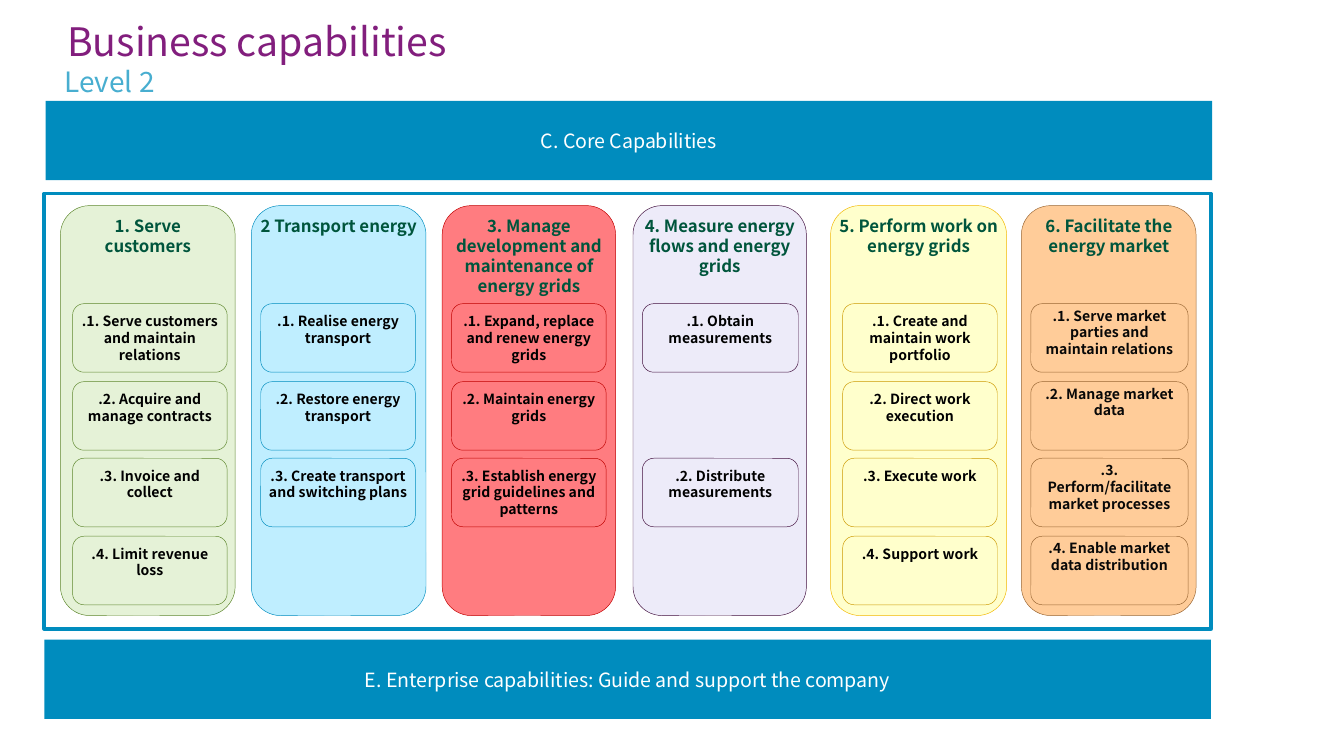
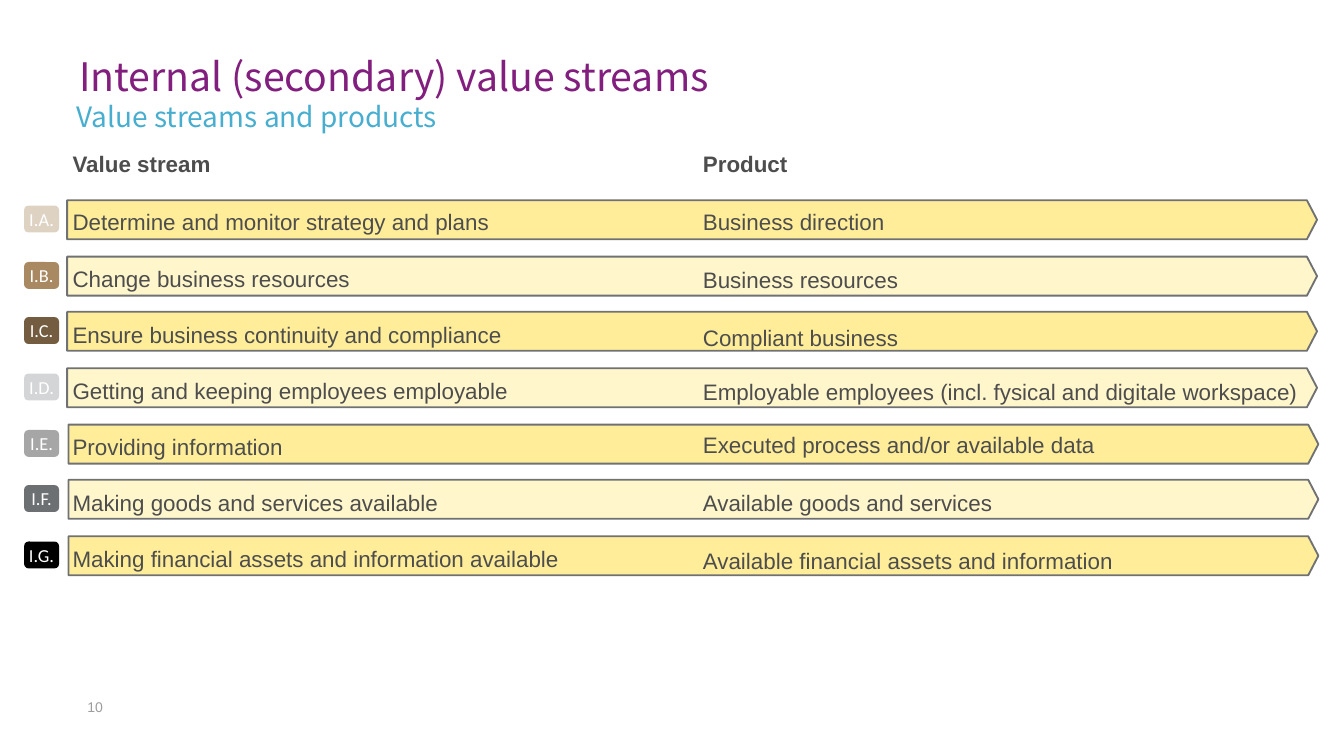
from dataclasses import dataclass
from itertools import cycle

from pptx import Presentation
from pptx import util as u
from pptx.dml.color import RGBColor
from pptx.enum import shapes, text

SCALE = 9144


@dataclass(frozen=True)
class Theme:
    """Colours, fonts and type sizes shared by the slides."""
    sans: str = "Noto Sans CJK TC"
    body: str = "Arial"
    badge: str = "Calibri"
    purple: str = "821E7D"
    sky: str = "48AED0"
    blue: str = "008CBE"
    green: str = "00553C"
    white: str = "FFFFFF"
    black: str = "000000"
    soft_black: str = "080808"
    ink: str = "4D4D4D"
    outline: str = "707173"
    muted: str = "9E9C9E"
    stripes: tuple = ("FFED99", "FFF6CC")
    title_size: float = 21
    subtitle_size: float = 15
    band_size: float = 10.5
    stream_size: float = 12
    badge_size: float = 9.8
    heading_size: float = 9
    small_size: float = 7.5


THEME = Theme()


@dataclass(frozen=True)
class Capability:
    """One capability card and the grid row it sits in."""
    row: int
    label: str
    side: int = 0


@dataclass(frozen=True)
class Domain:
    """One column of the core capabilities."""
    left: int
    width: int
    heading: tuple
    fill: str
    line: str
    indent: int
    card_width: int
    capabilities: tuple
    card_line: str = ""
    card_top: int = 4
    card_ink: str = THEME.black
    card_filled: bool = True
    wrap: bool = True


DOMAINS = (
    Domain(12, 130, ("1. Serve", "customers"), "E5F2D7", "5E872D", 9, 115, (
        Capability(0, ".1. Serve customers and maintain relations"),
        Capability(1, ".2. Acquire and manage contracts", 7),
        Capability(2, ".3. Invoice and collect", 7),
        Capability(3, ".4. Limit revenue loss", 7))),
    Domain(154, 130, ("2 Transport energy",), "BFEEFF", "008CBE", 7, 115, (
        Capability(0, ".1. Realise energy transport"),
        Capability(1, ".2. Restore energy transport"),
        Capability(2, ".3. Create transport and switching plans"))),
    Domain(296, 129, ("3. Manage development and maintenance of energy grids",),
           "FF7C80", "C00000", 7, 115, (
        Capability(0, ".1. Expand, replace and renew energy grids"),
        Capability(1, ".2. Maintain energy grids"),
        Capability(2, ".3. Establish energy grid guidelines and patterns"))),
    Domain(438, 129, ("4. Measure energy flows and energy grids",),
           "EDEBF9", "410F3E", 7, 116, (
        Capability(0, ".1. Obtain measurements"),
        Capability(2, ".2. Distribute measurements"))),
    Domain(585, 131, ("5. Perform work on", "energy grids"),
           "FFFFCC", "F2B800", 9, 115, (
        Capability(0, ".1. Create and maintain work portfolio", 3),
        Capability(1, ".2. Direct work execution", 7),
        Capability(2, ".3. Execute work", 7),
        Capability(3, ".4. Support work", 7)), card_line="CC9900", wrap=False),
    Domain(727, 130, ("6. Facilitate the energy market",),
           "FFCC99", "996633", 7, 117, (
        Capability(0, ".1. Serve market parties and maintain relations", 7),
        Capability(1, ".2. Manage market data", 7),
        Capability(2, ".3. Perform/facilitate market processes", 7),
        Capability(3, ".4. Enable market data distribution", 7)),
        card_top=0, card_ink=THEME.soft_black, card_filled=False),
)

STREAMS = (
    ("I.A.", "DED2C3", "Determine and monitor strategy and plans",
     "Business direction"),
    ("I.B.", "A98962", "Change business resources", "Business resources"),
    ("I.C.", "735C3F", "Ensure business continuity and compliance",
     "Compliant business"),
    ("I.D.", "D4D5D6", "Getting and keeping employees employable",
     "Employable employees (incl. fysical and digitale workspace)"),
    ("I.E.", "A6A6A6", "Providing information",
     "Executed process and/or available data"),
    ("I.F.", "6D7073", "Making goods and services available",
     "Available goods and services"),
    ("I.G.", "000000", "Making financial assets and information available",
     "Available financial assets and information"),
)


def px(*lengths):
    """Turn px lengths into EMU."""
    return [u.Emu(length * SCALE) for length in lengths]


def rgb(colour):
    """Turn a hex colour into an RGBColor."""
    return RGBColor.from_string(colour)


def write(shape, *lines, size, colour, font=THEME.sans, bold=False, align="LEFT",
          anchor="TOP", inset=(0, 0, 0, 0), wrap=True, spacing=None,
          before=0, after=(0,), bold_first=False):
    """Write one paragraph per line into a shape."""
    frame = shape.text_frame
    frame.word_wrap = wrap
    frame.auto_size = text.MSO_AUTO_SIZE.NONE
    frame.vertical_anchor = text.MSO_ANCHOR[anchor]
    (frame.margin_left, frame.margin_top,
     frame.margin_right, frame.margin_bottom) = px(*inset)
    for index, (line, gap) in enumerate(zip(lines, cycle(after))):
        paragraph = frame.paragraphs[0] if index == 0 else frame.add_paragraph()
        paragraph.alignment = text.PP_ALIGN[align]
        paragraph.line_spacing = spacing
        paragraph.space_before = u.Pt(before if index else 0)
        paragraph.space_after = u.Pt(gap)
        run = paragraph.add_run()
        run.text = line
        run.font.name = font
        run.font.size = u.Pt(size)
        run.font.bold = bold or (bold_first and index == 0)
        run.font.color.rgb = rgb(colour)


def add_text(slide, box, *lines, **style):
    """Add a text box."""
    write(slide.shapes.add_textbox(*px(*box)), *lines, **style)


def add_block(slide, kind, box, fill=None, line=None, weight=1):
    """Add a flat preset shape and return it."""
    block = slide.shapes.add_shape(shapes.MSO_SHAPE[kind], *px(*box))
    block.shadow.inherit = False
    if fill:
        block.fill.solid()
        block.fill.fore_color.rgb = rgb(fill)
    else:
        block.fill.background()
    if line:
        block.line.color.rgb = rgb(line)
        block.line.width = u.Pt(weight)
    else:
        block.line.fill.background()
    return block


def add_heading(slide, left, top, title, subtitle):
    """Place the slide title with its subtitle below."""
    add_text(slide, (left, top, 728, 39), title, size=THEME.title_size,
             colour=THEME.purple, spacing=u.Pt(28))
    add_text(slide, (left - 2, top + 34, 800, 23), subtitle,
             size=THEME.subtitle_size, colour=THEME.sky, spacing=1.2)


def add_band(slide, box, label):
    """Place a full-width blue band."""
    write(add_block(slide, "RECTANGLE", box, THEME.blue), label,
          size=THEME.band_size, colour=THEME.white, align="CENTER",
          anchor="MIDDLE", inset=(7, 4, 7, 4))


def add_domain(slide, left, top, domain):
    """Place a column with its heading and capability cards."""
    column = add_block(slide, "ROUNDED_RECTANGLE", (left, top, domain.width, 305),
                       domain.fill, domain.line, 0.25)
    write(column, *domain.heading, size=THEME.heading_size, colour=THEME.green,
          bold=True, align="CENTER", inset=(0, 1, 0, 4), wrap=domain.wrap)
    for capability in domain.capabilities:
        box = (left + domain.indent, top + 73 + round(capability.row * 173 / 3),
               domain.card_width, 51)
        card = add_block(slide, "ROUNDED_RECTANGLE", box,
                         domain.fill if domain.card_filled else None,
                         domain.card_line or domain.line, 0.25)
        write(card, capability.label, size=THEME.small_size,
              colour=domain.card_ink, bold=True, align="CENTER",
              inset=(capability.side, domain.card_top, capability.side,
                     domain.card_top))


def add_core_frame(slide, left, top, width, height):
    """Place the outlined frame with all domain columns."""
    add_block(slide, "RECTANGLE", (left, top, width, height),
              THEME.white, THEME.blue, 2)
    for domain in DOMAINS:
        add_domain(slide, left + domain.left, top + 9, domain)


def add_stream_arrow(slide, left, top, fill):
    """Place the arrow behind one value stream."""
    arrow = add_block(slide, "PENTAGON", (left, top, 930, 29), fill, THEME.outline)
    arrow.adjustments[0] = 0.26


def add_badge(slide, left, top, code, fill):
    """Place the code badge of one value stream."""
    write(add_block(slide, "ROUNDED_RECTANGLE", (left, top, 26, 20), fill), code,
          size=THEME.badge_size, colour=THEME.white, font=THEME.badge,
          align="CENTER", anchor="MIDDLE", inset=(0, 5, 0, 5))


def add_stream_column(slide, left, top, width, lines, after):
    """Place a headed list of streams or products."""
    add_text(slide, (left, top, width, 373), *lines, size=THEME.stream_size,
             colour=THEME.ink, font=THEME.body, spacing=1.5, before=5,
             after=after, bold_first=True)


def build_capabilities(slide):
    """Build the business capabilities map."""
    add_heading(slide, 50, 9, "Business capabilities", "Level 2")
    add_band(slide, (34, 75, 868, 59), "C. Core Capabilities")
    add_core_frame(slide, 33, 144, 868, 324)
    add_band(slide, (33, 476, 868, 59),
             "E. Enterprise capabilities: Guide and support the company")


def build_streams(slide):
    """Build the list of value streams and products."""
    codes, fills, streams, products = zip(*STREAMS)
    for row, (code, fill, stripe) in enumerate(
            zip(codes, fills, cycle(THEME.stripes))):
        top = 149 + round(row * 125 / 3)
        add_stream_arrow(slide, 50 + row // 4, top, stripe)
        add_badge(slide, 18, top + 4, code, fill)
    add_stream_column(slide, 523, 102, 472, ("Product", *products),
                      (4.5, 4.5, 4.5, 2, 2, 4.5, 4.5, 4.5))
    add_stream_column(slide, 54, 102, 737, ("Value stream", *streams),
                      (4.5,) + (3.5,) * 7)
    add_heading(slide, 59, 35, "Internal (secondary) value streams",
                "Value streams and products")
    add_text(slide, (65, 520, 39, 24), "10", size=THEME.small_size,
             colour=THEME.muted, font=THEME.body)


def main():
    """Build and save the deck."""
    deck = Presentation()
    deck.slide_width = u.Inches(10)
    deck.slide_height = deck.slide_width * 9 // 16
    for build in (build_capabilities, build_streams):
        build(deck.slides.add_slide(deck.slide_layouts[6]))
    deck.save("out.pptx")


if __name__ == "__main__":
    main()
